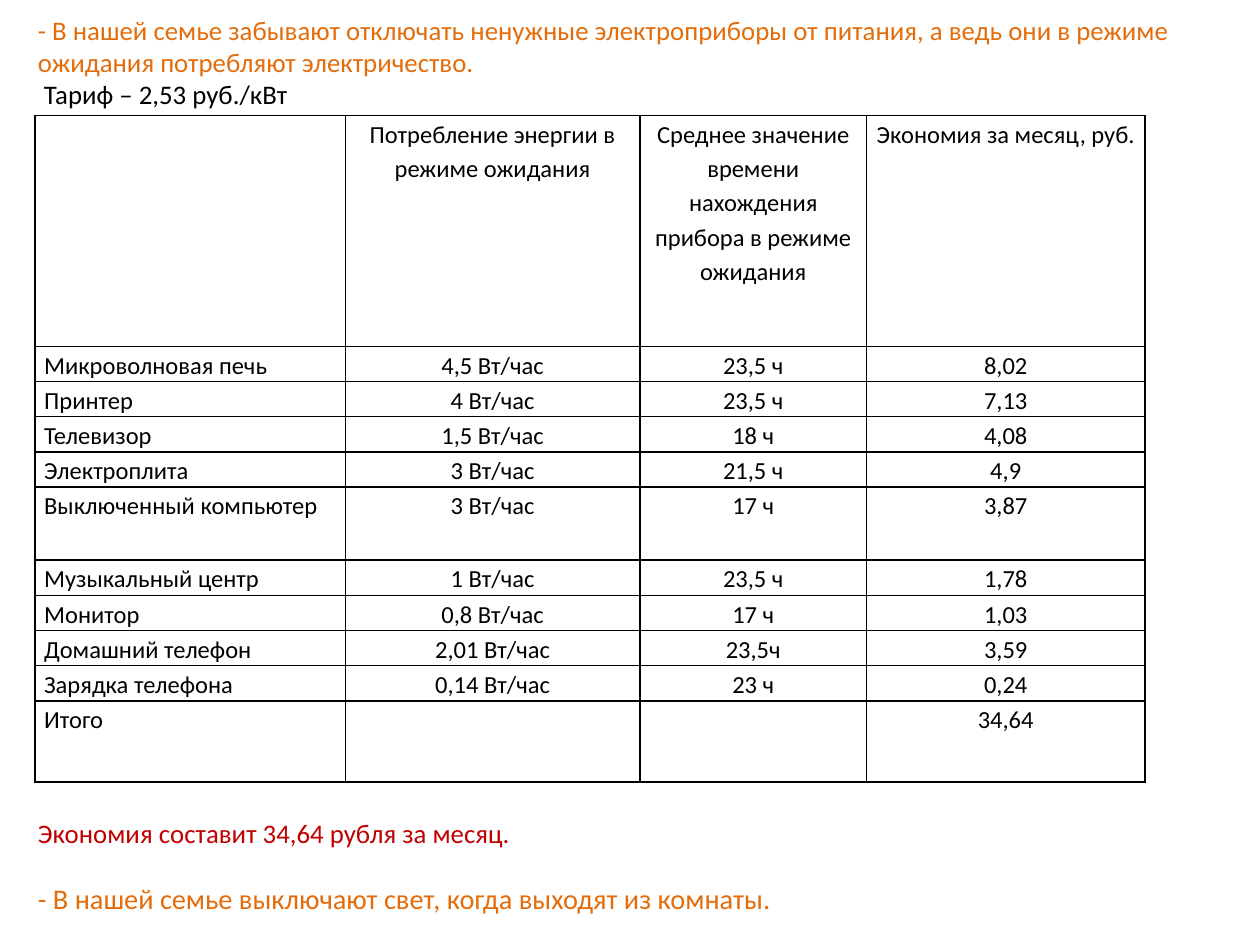
from dataclasses import dataclass

from lxml import etree
from pptx import Presentation
from pptx.dml.color import RGBColor as Rgb
from pptx.enum import text
from pptx.oxml import ns
from pptx.util import Cm, Pt


@dataclass
class Theme:
    font: str = "Calibri"
    black: str = "000000"
    orange: str = "E46C0A"
    red: str = "C00000"
    body: float = 15.3
    last: float = 16.2
    cell: float = 14
    rule: float = 1
    lead: float = 1.15


LOOK = Theme()

LINES = [
    ("- В нашей семье забывают отключать ненужные электроприборы от питания, "
     "а ведь они в режиме ожидания потребляют электричество.",
     LOOK.orange, LOOK.body, 0),
    (" Тариф – 2,53 руб./кВт", LOOK.black, LOOK.body, 0),
    ("Экономия составит 34,64 рубля за месяц.", LOOK.red, LOOK.body, 404),
    ("- В нашей семье выключают свет, когда выходят из комнаты.",
     LOOK.orange, LOOK.last, 18),
]

ROWS = [
    ("", "Потребление энергии в режиме ожидания",
     "Среднее значение времени нахождения прибора в режиме ожидания",
     "Экономия за месяц, руб."),
    ("Микроволновая печь", "4,5 Вт/час", "23,5 ч", "8,02"),
    ("Принтер", "4 Вт/час", "23,5 ч", "7,13"),
    ("Телевизор", "1,5 Вт/час", "18 ч", "4,08"),
    ("Электроплита", "3 Вт/час", "21,5 ч", "4,9"),
    ("Выключенный компьютер", "3 Вт/час", "17 ч", "3,87"),
    ("Музыкальный центр", "1 Вт/час", "23,5 ч", "1,78"),
    ("Монитор", "0,8 Вт/час", "17 ч", "1,03"),
    ("Домашний телефон", "2,01 Вт/час", "23,5ч", "3,59"),
    ("Зарядка телефона", "0,14 Вт/час", "23 ч", "0,24"),
    ("Итого", "", "", "34,64"),
]
WIDTHS = [6.25, 5.94, 4.57, 5.61]
HEIGHTS = [4.65] + [0.71] * 4 + [1.47] + [0.71] * 4 + [1.63]


def style(para, size, color):
    para.font.size = Pt(size)
    for run in para.runs:
        run.font.name = LOOK.font
        run.font.size = Pt(size)
        run.font.color.rgb = Rgb.from_string(color)


def add_text(slide, left, top, width, height):
    title = slide.shapes.title
    title.left, title.top = Cm(left), Cm(top)
    title.width, title.height = Cm(width), Cm(height)
    frame = title.text_frame
    frame.word_wrap = True
    frame.auto_size = text.MSO_AUTO_SIZE.NONE
    frame.vertical_anchor = text.MSO_ANCHOR.TOP
    frame.text = "\n".join(line[0] for line in LINES)
    for para, (_, color, size, gap) in zip(frame.paragraphs, LINES):
        para.alignment = text.PP_ALIGN.LEFT
        para.space_before = Pt(gap)
        style(para, size, color)


def add_rules(cell):
    props = cell._tc.get_or_add_tcPr()
    for spot, side in enumerate(("lnL", "lnR", "lnT", "lnB")):
        line = etree.Element(ns.qn(f"a:{side}"), w=str(Pt(LOOK.rule)))
        fill = etree.SubElement(line, ns.qn("a:solidFill"))
        etree.SubElement(fill, ns.qn("a:srgbClr"), val=LOOK.black)
        props.insert(spot, line)


def fill_cell(cell, words, align):
    cell.margin_left = cell.margin_right = Cm(0.18)
    cell.margin_top = cell.margin_bottom = 0
    cell.fill.background()
    add_rules(cell)
    cell.text_frame.text = words
    para = cell.text_frame.paragraphs[0]
    para.alignment = align
    para.line_spacing = LOOK.lead
    style(para, LOOK.cell, LOOK.black)


def add_grid(slide, left, top):
    grid = slide.shapes.add_table(
        len(ROWS), len(WIDTHS), Cm(left), Cm(top),
        Cm(sum(WIDTHS)), Cm(sum(HEIGHTS))).table
    grid.first_row = grid.horz_banding = False
    for col, width in zip(grid.columns, WIDTHS):
        col.width = Cm(width)
    for row, height, words in zip(grid.rows, HEIGHTS, ROWS):
        row.height = Cm(height)
        for spot, cell in enumerate(row.cells):
            align = text.PP_ALIGN.CENTER if spot else text.PP_ALIGN.LEFT
            fill_cell(cell, words[spot], align)


def main():
    deck = Presentation()
    deck.slide_width, deck.slide_height = Cm(25.4), Cm(19.05)
    slide = deck.slides.add_slide(deck.slide_layouts[5])
    add_text(slide, 0.51, 0.15, 24.41, 18.9)
    add_grid(slide, 0.71, 2.33)
    deck.save("out.pptx")


if __name__ == "__main__":
    main()
